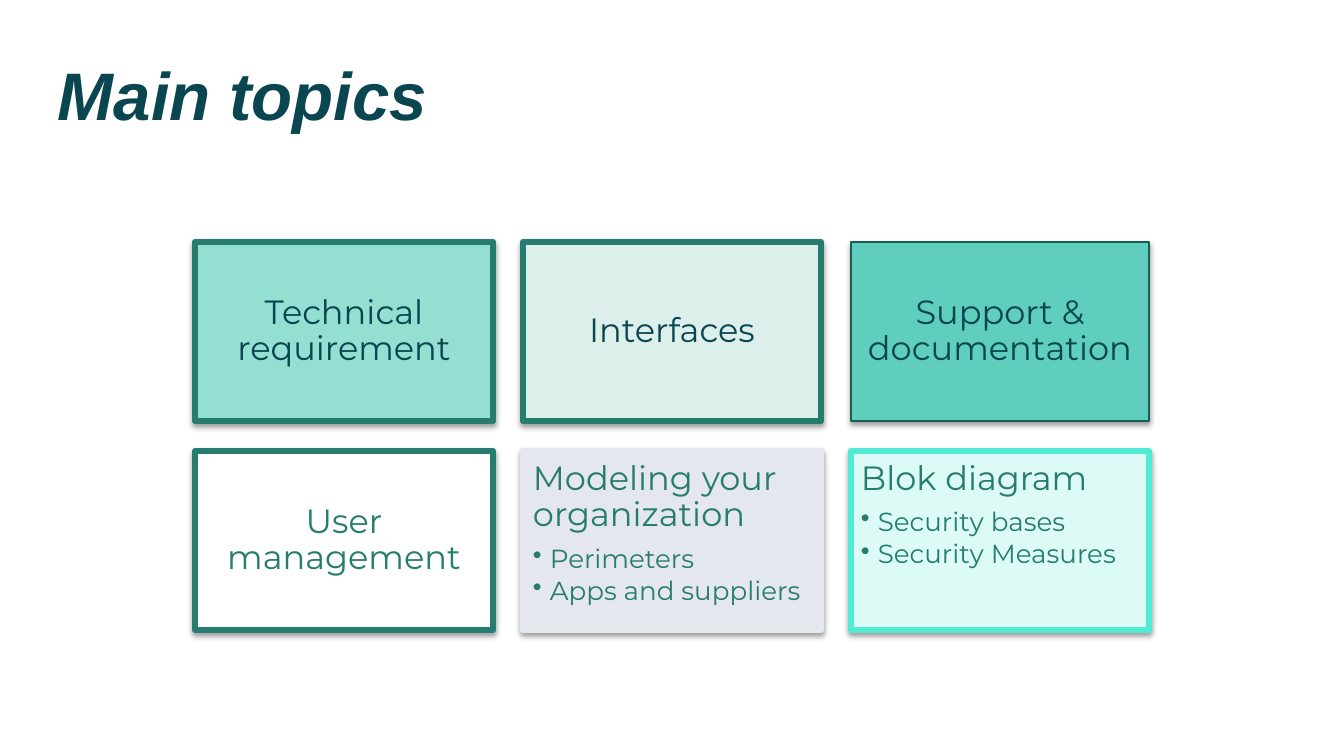
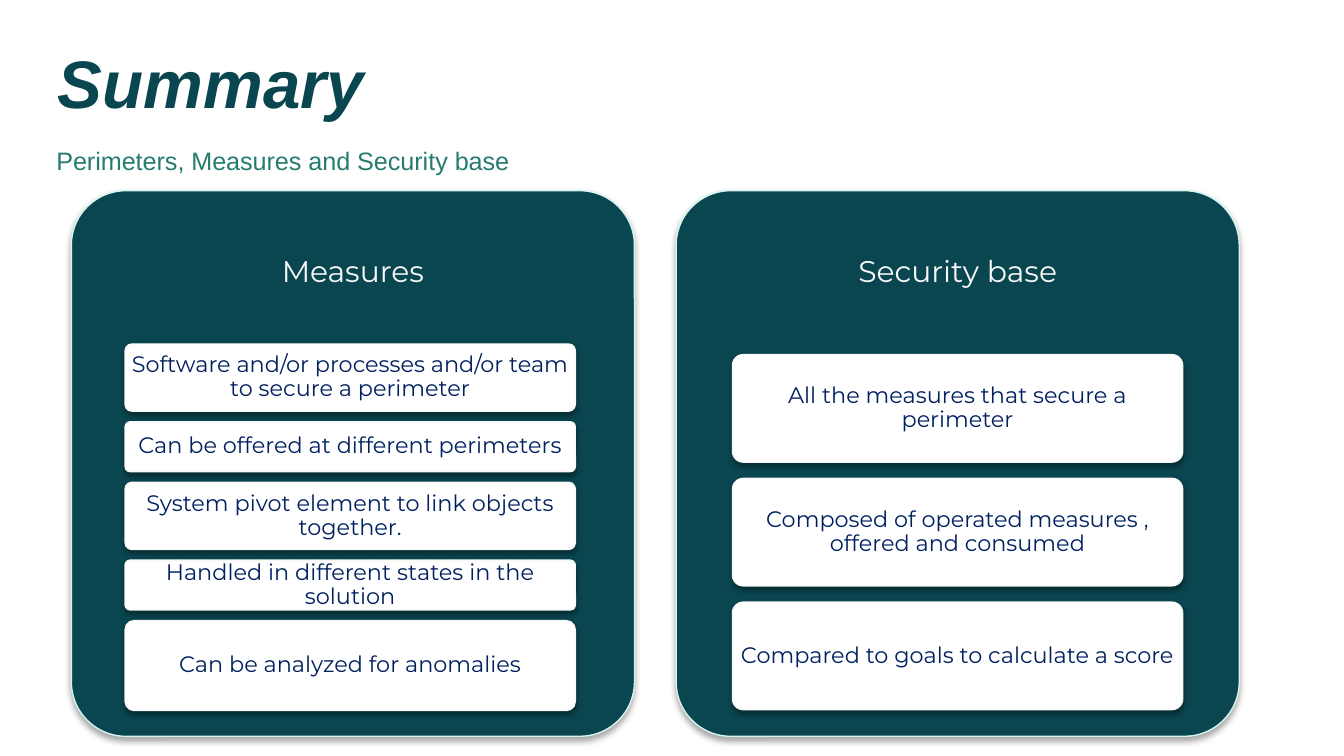
from dataclasses import dataclass

from lxml.etree import SubElement
from pptx import Presentation
from pptx.dml.color import RGBColor
from pptx.enum.shapes import MSO_SHAPE
from pptx.enum.text import MSO_ANCHOR, MSO_AUTO_SIZE, PP_ALIGN
from pptx.oxml.ns import qn
from pptx.util import Pt


@dataclass(frozen=True)
class Theme:
    # Fonts and type sizes
    head_font: str = "Arial"
    body_font: str = "Montserrat"
    title_size: float = 36
    subtitle_size: float = 13.5
    topic_size: float = 18
    bullet_size: float = 14
    panel_size: float = 16
    card_size: float = 12
    # Colours
    navy: str = "0A4650"
    green: str = "267C6E"
    dark_green: str = "1C5D53"
    mint: str = "94DED2"
    pale_mint: str = "DDEFEA"
    teal: str = "5FCEBC"
    grey: str = "E4E7ED"
    ice: str = "DCFAF6"
    aqua: str = "50EBD2"
    panel_edge: str = "D6F5F1"
    panel_text: str = "F8F8F8"
    white: str = "FFFFFF"
    card_edge: str = "F9F9F9"
    card_text: str = "002060"


T = Theme()

# Text, fill, line colour, line width, text colour, bullets
TOPICS = [
    ("Technical requirement", T.mint, T.green, 3, T.navy, []),
    ("Interfaces", T.pale_mint, T.green, 3, T.navy, []),
    ("Support & documentation", T.teal, T.dark_green, 0.75, T.navy, []),
    ("User management", T.white, T.green, 3, T.green, []),
    ("Modeling your organization", T.grey, T.grey, 3, T.green,
     ["Perimeters", "Apps and suppliers"]),
    ("Blok diagram", T.ice, T.aqua, 3, T.green,
     ["Security bases", "Security Measures"]),
]

# Card text and height
MEASURES = [
    ("Software and/or processes and/or team to secure a perimeter", 36),
    ("Can be offered at different perimeters", 26.7),
    ("System pivot element to link objects together.", 36),
    ("Handled in different states in the solution", 26.7),
    ("Can be analyzed for anomalies", 48.2),
]
SECURITY_BASE = [
    ("All the measures that secure a perimeter", 57.6),
    ("Composed of operated measures , offered and consumed", 57.6),
    ("Compared to goals to calculate a score", 57.6),
]


def set_frame(tf, inset, anchor):
    tf.word_wrap = True
    tf.auto_size = MSO_AUTO_SIZE.NONE
    tf.margin_left = tf.margin_right = Pt(inset)
    tf.margin_top = tf.margin_bottom = Pt(inset)
    tf.vertical_anchor = anchor


def add_run(p, text, font, size, color, bold=False, italic=False):
    r = p.add_run()
    r.text = text
    r.font.name = font
    r.font.size = Pt(size)
    r.font.color.rgb = RGBColor.from_string(color)
    r.font.bold = bold
    r.font.italic = italic


def add_label(p, text, size, color, align=PP_ALIGN.CENTER):
    p.alignment = align
    p.line_spacing = 0.9
    add_run(p, text, T.body_font, size, color)


def add_bullet(p, text, size, color):
    pPr = p._p.get_or_add_pPr()
    pPr.set("marL", str(Pt(9)))
    pPr.set("indent", str(-Pt(9)))
    SubElement(pPr, qn("a:buChar")).set("char", "•")
    add_label(p, text, size, color, PP_ALIGN.LEFT)
    p.space_after = Pt(size * 0.15)


def add_shadow(sp, opacity=38, distance=1.6):
    sp.shadow.inherit = False
    effects = sp._element.spPr.find(qn("a:effectLst"))
    shadow = SubElement(effects, qn("a:outerShdw"), blurRad=str(Pt(3.1)),
                        dist=str(Pt(distance)), dir="5400000", rotWithShape="0")
    color = SubElement(shadow, qn("a:srgbClr"), val="000000")
    SubElement(color, qn("a:alpha"), val=str(opacity * 1000))


def add_box(slide, kind, box, fill, line, width):
    sp = slide.shapes.add_shape(kind, *map(Pt, box))
    sp.fill.solid()
    sp.fill.fore_color.rgb = RGBColor.from_string(fill)
    sp.line.color.rgb = RGBColor.from_string(line)
    sp.line.width = Pt(width)
    if kind == MSO_SHAPE.ROUNDED_RECTANGLE:
        sp.adjustments[0] = 0.1
    else:
        SubElement(sp.line._get_or_add_ln(), qn("a:round"))
    return sp


def add_text_box(slide, box, inset, anchor):
    tf = slide.shapes.add_textbox(*map(Pt, box)).text_frame
    set_frame(tf, inset, anchor)
    return tf.paragraphs[0]


def add_titled_slide(prs, title, top, height):
    slide = prs.slides.add_slide(prs.slide_layouts[5])
    sp = slide.shapes.title
    sp.left, sp.top, sp.width, sp.height = map(Pt, (31, top, 607.7, height))
    set_frame(sp.text_frame, 0, MSO_ANCHOR.MIDDLE)
    p = sp.text_frame.paragraphs[0]
    p.alignment = PP_ALIGN.LEFT
    add_run(p, title, T.head_font, T.title_size, T.navy, bold=True, italic=True)
    return slide


def add_topic(slide, left, top, topic):
    text, fill, line, width, color, bullets = topic
    sp = add_box(slide, MSO_SHAPE.RECTANGLE, (left, top, 159.8, 96), fill, line, width)
    add_shadow(sp)
    tf = sp.text_frame
    set_frame(tf, 5.4, MSO_ANCHOR.TOP if bullets else MSO_ANCHOR.MIDDLE)
    p = tf.paragraphs[0]
    add_label(p, text, T.topic_size, color,
              PP_ALIGN.LEFT if bullets else PP_ALIGN.CENTER)
    if bullets:
        p.space_after = Pt(T.topic_size * 0.35)
    for bullet in bullets:
        add_bullet(tf.add_paragraph(), bullet, T.bullet_size, color)


def add_panel(slide, left, heading, cards, card_left, card_top, gap):
    top, width = 102.2, 301.7
    panel = add_box(slide, MSO_SHAPE.ROUNDED_RECTANGLE, (left, top, width, 292.3),
                    T.navy, T.panel_edge, 0.75)
    add_shadow(panel, 35, 1.8)
    p = add_text_box(slide, (left, top, width, 87.8), 5, MSO_ANCHOR.MIDDLE)
    add_label(p, heading, T.panel_size, T.panel_text)
    for text, height in cards:
        card = add_box(slide, MSO_SHAPE.ROUNDED_RECTANGLE,
                       (card_left, card_top, 241.2, height),
                       T.white, T.card_edge, 0.75)
        add_shadow(card)
        set_frame(card.text_frame, 2.2, MSO_ANCHOR.MIDDLE)
        add_label(card.text_frame.paragraphs[0], text, T.card_size, T.card_text)
        card_top += height + gap


def build_topics(prs):
    slide = add_titled_slide(prs, "Main topics", 24.5, 51)
    for i, topic in enumerate(TOPICS):
        row, col = divmod(i, 3)
        add_topic(slide, 104.4 + col * 175.7, 129.6 + row * 112, topic)


def build_summary(prs):
    slide = add_titled_slide(prs, "Summary", 10, 67.7)
    p = add_text_box(slide, (30.2, 77.8, 314.6, 20), 0, MSO_ANCHOR.TOP)
    add_run(p, "Perimeters, Measures and Security base",
            T.head_font, T.subtitle_size, T.green)
    add_panel(slide, 38.2, "Measures", MEASURES, 67, 184.3, 5.7)
    add_panel(slide, 362.2, "Security base", SECURITY_BASE, 392.4, 190, 8.7)


def main():
    prs = Presentation()
    prs.slide_width, prs.slide_height = Pt(720), Pt(405)
    build_topics(prs)
    build_summary(prs)
    prs.save("out.pptx")


if __name__ == "__main__":
    main()
